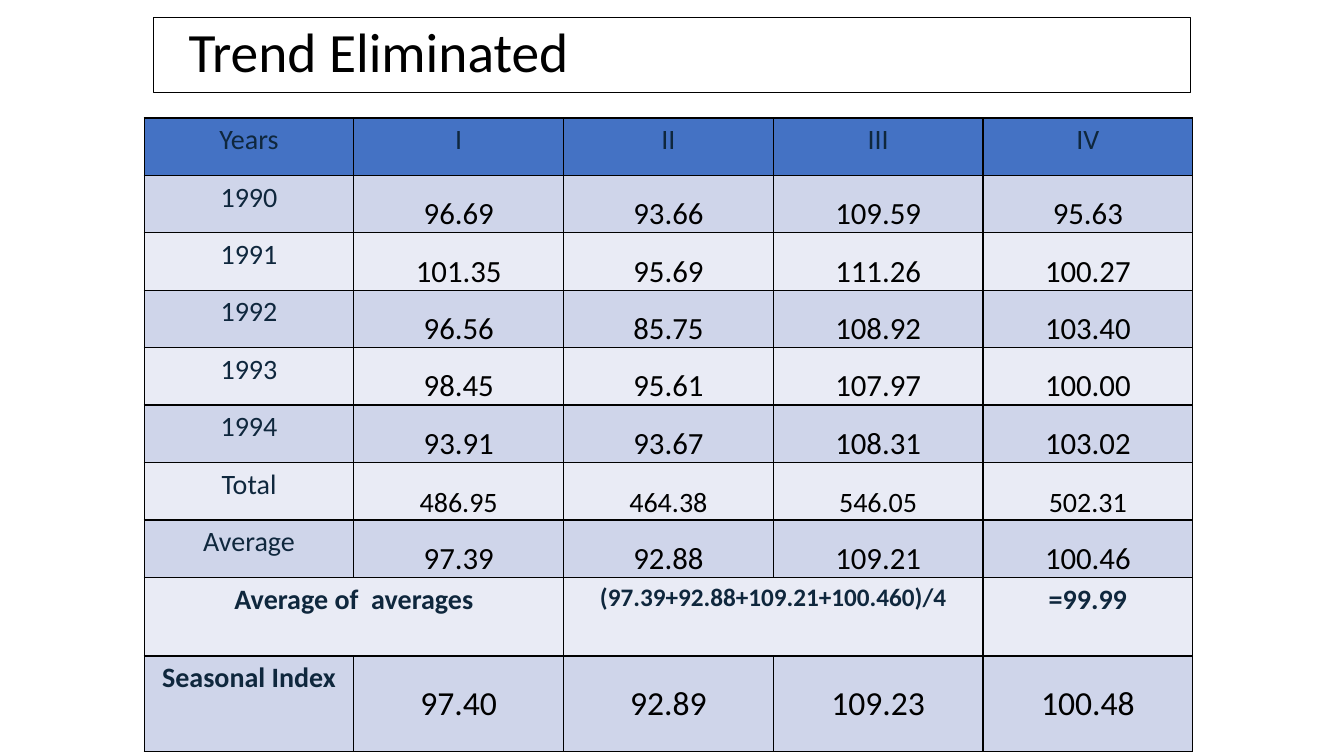
from dataclasses import dataclass
from lxml import etree
from pptx import Presentation
from pptx import util as u
from pptx.dml.color import RGBColor
from pptx.enum import shapes, text
from pptx.oxml.ns import qn

PX = 9144


@dataclass(frozen=True)
class Theme:
    font: str = "Calibri"
    black: str = "000000"
    navy: str = "0F273D"
    header: str = "4472C4"
    bands: tuple = ("CFD5EA", "E9EBF5")
    title_size: float = 39.6
    label_size: int = 20
    formula_size: int = 18
    value_size: int = 22
    index_size: int = 24
    title_line: float = 0.75
    grid_line: int = 1


class SlideBuilder:
    def __init__(self, slide, theme):
        self.slide = slide
        self.theme = theme

    def set_words(self, frame, words, size, color, align, bold=False):
        frame.text = words
        para = frame.paragraphs[0]
        para.alignment = align
        for span in para.runs:
            span.font.name = self.theme.font
            span.font.size = u.Pt(size)
            span.font.bold = bold
            span.font.color.rgb = RGBColor.from_string(color)
        return para

    def inset(self, target, left, top, right, bottom):
        target.margin_left, target.margin_top = left * PX, top * PX
        target.margin_right, target.margin_bottom = right * PX, bottom * PX

    def title(self, words, left, top, width, height):
        box = self.slide.shapes.add_shape(
            shapes.MSO_SHAPE.RECTANGLE, left * PX, top * PX, width * PX, height * PX)
        box.shadow.inherit = False
        box.fill.background()
        box.line.color.rgb = RGBColor.from_string(self.theme.black)
        box.line.width = u.Pt(self.theme.title_line)
        frame = box.text_frame
        frame.word_wrap = True
        frame.vertical_anchor = text.MSO_ANCHOR.MIDDLE
        self.inset(frame, 35, 5, 10, 5)
        para = self.set_words(frame, words, self.theme.title_size,
                              self.theme.black, text.PP_ALIGN.LEFT)
        para.line_spacing = 0.9

    def table(self, left, top, column_width, heights, columns):
        frame = self.slide.shapes.add_table(
            len(heights), columns, left * PX, top * PX,
            column_width * columns * PX, sum(heights) * PX)
        grid = frame.table
        for column in grid.columns:
            column.width = column_width * PX
        for row, height in zip(grid.rows, heights):
            row.height = height * PX
        return grid

    def borders(self, cell):
        properties = cell._tc.get_or_add_tcPr()
        for side in ("lnL", "lnR", "lnT", "lnB"):
            line = etree.SubElement(properties, qn(f"a:{side}"),
                                    w=str(u.Pt(self.theme.grid_line)))
            fill = etree.SubElement(line, qn("a:solidFill"))
            etree.SubElement(fill, qn("a:srgbClr"), val=self.theme.black)

    def cell(self, cell, words, fill, size, color, anchor, insets, bold):
        self.borders(cell)
        cell.fill.solid()
        cell.fill.fore_color.rgb = RGBColor.from_string(fill)
        cell.vertical_anchor = anchor
        self.inset(cell, *insets)
        self.set_words(cell.text_frame, words, size, color,
                       text.PP_ALIGN.CENTER, bold)

    def label(self, cell, words, fill, size, bold=False):
        self.cell(cell, words, fill, size, self.theme.navy,
                  text.MSO_ANCHOR.TOP, (11, 5, 11, 5), bold)

    def value(self, cell, words, fill, size, anchor):
        self.cell(cell, words, fill, size, self.theme.black,
                  anchor, (1, 1, 1, 0), False)


ROWS = [
    ("Years", "I", "II", "III", "IV"),
    ("1990", "96.69", "93.66", "109.59", "95.63"),
    ("1991", "101.35", "95.69", "111.26", "100.27"),
    ("1992", "96.56", "85.75", "108.92", "103.40"),
    ("1993", "98.45", "95.61", "107.97", "100.00"),
    ("1994", "93.91", "93.67", "108.31", "103.02"),
    ("Total", "486.95", "464.38", "546.05", "502.31"),
    ("Average", "97.39", "92.88", "109.21", "100.46"),
    ("Average of  averages", "", "(97.39+92.88+109.21+100.460)/4", "", "=99.99"),
    ("Seasonal Index", "97.40", "92.89", "109.23", "100.48"),
]
HEADER, TOTAL, OVERALL, INDEX = 0, 6, 8, 9


def main():
    deck = Presentation()
    deck.slide_width, deck.slide_height = 1333 * PX, 750 * PX
    theme = Theme()
    page = SlideBuilder(deck.slides.add_slide(deck.slide_layouts[6]), theme)
    page.title("Trend Eliminated", 152, 17, 1029, 75)

    grid = page.table(143, 117, 208, [57] * 8 + [78, 95], len(ROWS[0]))
    value_sizes = {TOTAL: theme.label_size, INDEX: theme.index_size}
    for r, row in enumerate(ROWS):
        fill = theme.header if r == HEADER else theme.bands[(r - 1) % 2]
        anchor = text.MSO_ANCHOR.MIDDLE if r == INDEX else text.MSO_ANCHOR.BOTTOM
        for c, words in enumerate(row):
            cell = grid.cell(r, c)
            if c == 0 or r in (HEADER, OVERALL):
                formula = r == OVERALL and c == 2
                size = theme.formula_size if formula else theme.label_size
                page.label(cell, words, fill, size, bold=r >= OVERALL)
            else:
                page.value(cell, words, fill,
                           value_sizes.get(r, theme.value_size), anchor)
    for c in (0, 2):
        grid.cell(OVERALL, c).merge(grid.cell(OVERALL, c + 1))

    deck.save("out.pptx")


if __name__ == "__main__":
    main()
